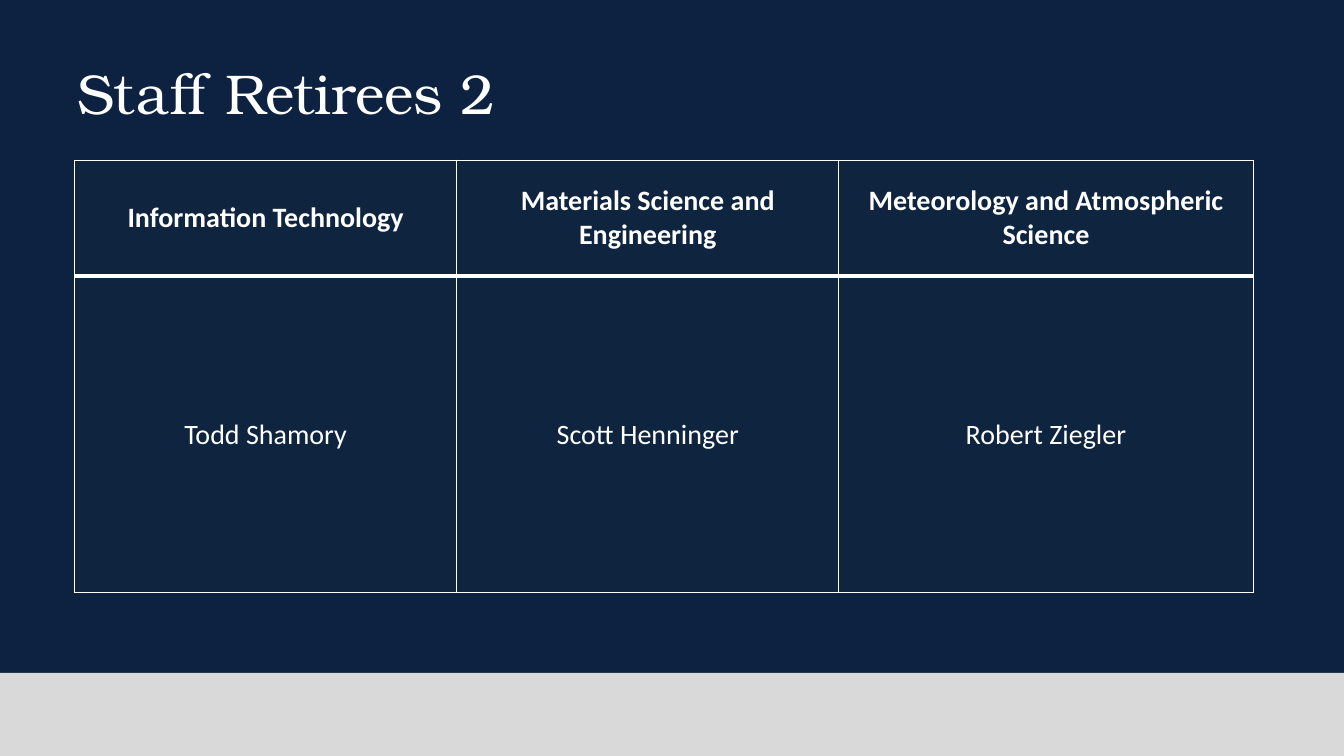
from dataclasses import dataclass

from lxml.etree import SubElement
from pptx import Presentation
from pptx.dml.color import RGBColor
from pptx.enum.shapes import MSO_SHAPE
from pptx.enum.text import MSO_ANCHOR, PP_ALIGN
from pptx.oxml.ns import qn
from pptx.util import Inches, Pt


@dataclass(frozen=True)
class Theme:
    navy: str = "0D2241"
    gray: str = "D9D9D9"
    cell: str = "0F243E"
    white: str = "FFFFFF"
    serif: str = "TeX Gyre Bonum"
    sans: str = "Calibri"
    head: int = 40
    body: int = 20
    thin: int = 1
    thick: int = 3


THEME = Theme()
WIDTH, HEIGHT = Inches(13.33), Inches(7.5)
COLS = (3.79, 3.79, 4.11)
ROWS = (1.15, 3.14)
STAFF = (
    ("Information Technology", "Materials Science and Engineering",
     "Meteorology and Atmospheric Science"),
    ("Todd Shamory", "Scott Henninger", "Robert Ziegler"),
)


def paint(fill, color):
    fill.solid()
    fill.fore_color.rgb = RGBColor.from_string(color)


def write(frame, text, face, size, align, bold=False):
    para = frame.paragraphs[0]
    para.alignment = align
    run = para.add_run()
    run.text = text
    font = run.font
    font.name, font.size, font.bold = face, Pt(size), bold
    font.color.rgb = RGBColor.from_string(THEME.white)


def add_band(slide, top, high, color):
    band = slide.shapes.add_shape(MSO_SHAPE.RECTANGLE, 0, top, WIDTH, high)
    band.shadow.inherit = False
    paint(band.fill, color)
    band.line.fill.background()


def add_title(slide, text):
    title = slide.shapes.title
    title.left, title.top = Inches(0.67), Inches(0.36)
    title.width, title.height = Inches(12), Inches(1.11)
    frame = title.text_frame
    frame.vertical_anchor = MSO_ANCHOR.MIDDLE
    write(frame, text, THEME.serif, THEME.head, PP_ALIGN.LEFT)
    # Bring the title in front of the bands
    slide.shapes[-1].element.addnext(title.element)


def add_edge(cell, side, width):
    props = cell._tc.get_or_add_tcPr()
    edge = SubElement(props, qn(f"a:ln{side}"), w=str(Pt(width)))
    fill = SubElement(edge, qn("a:solidFill"))
    SubElement(fill, qn("a:srgbClr"), val=THEME.white)


def fill_cell(cell, text, header):
    cell.margin_left = cell.margin_right = Inches(0.11)
    cell.margin_top = cell.margin_bottom = Inches(0.06)
    cell.vertical_anchor = MSO_ANCHOR.MIDDLE
    write(cell.text_frame, text, THEME.sans, THEME.body,
          PP_ALIGN.CENTER, header)
    # The rule between the two rows is the thick one
    heavy = "B" if header else "T"
    for side in "LRTB":
        add_edge(cell, side, THEME.thick if side == heavy else THEME.thin)
    paint(cell.fill, THEME.cell)


def add_grid(slide, data):
    table = slide.shapes.add_table(
        len(ROWS), len(COLS), Inches(0.74), Inches(1.59),
        Inches(sum(COLS)), Inches(sum(ROWS))).table
    for col, wide in zip(table.columns, COLS):
        col.width = Inches(wide)
    for row, high, texts in zip(table.rows, ROWS, data):
        row.height = Inches(high)
        for cell, text in zip(row.cells, texts):
            fill_cell(cell, text, texts is data[0])


def main():
    deck = Presentation()
    deck.slide_width, deck.slide_height = WIDTH, HEIGHT
    slide = deck.slides.add_slide(deck.slide_layouts[5])
    # Background bands
    foot = int(HEIGHT * 0.89)
    add_band(slide, 0, foot, THEME.navy)
    add_band(slide, foot, HEIGHT - foot, THEME.gray)
    # Heading and table
    add_title(slide, "Staff Retirees 2")
    add_grid(slide, STAFF)
    deck.save("out.pptx")


if __name__ == "__main__":
    main()
